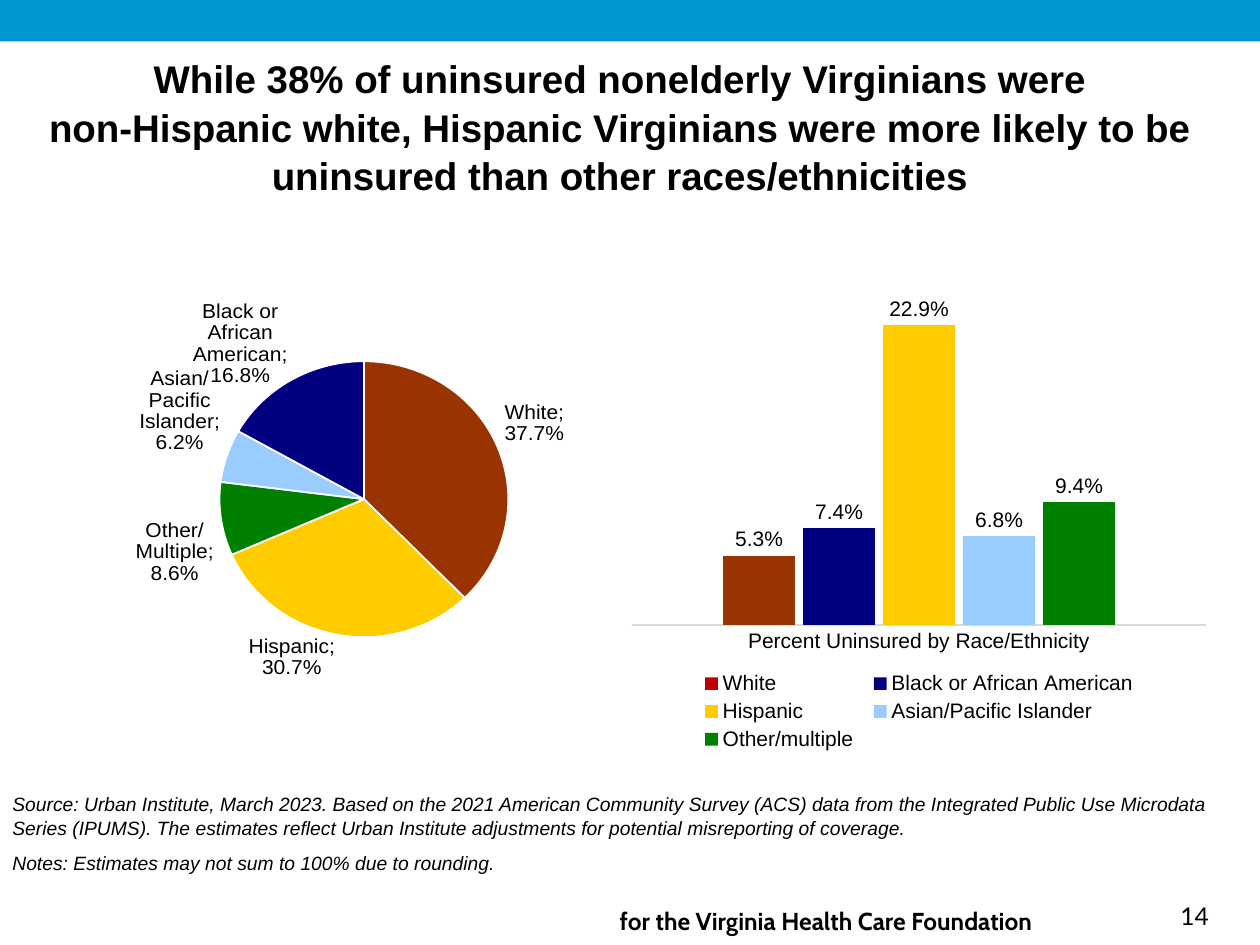
from lxml import etree
from pptx import Presentation
from pptx.chart.data import CategoryChartData
from pptx.dml.color import RGBColor
from pptx.enum.chart import XL_CHART_TYPE, XL_LABEL_POSITION, XL_LEGEND_POSITION, XL_TICK_MARK
from pptx.enum.shapes import MSO_SHAPE
from pptx.enum.text import MSO_ANCHOR, MSO_AUTO_SIZE, PP_ALIGN
from pptx.oxml.ns import qn
from pptx.util import Inches, Pt

PIE = XL_CHART_TYPE.PIE
COLUMNS = XL_CHART_TYPE.COLUMN_CLUSTERED
OUTSIDE = XL_LABEL_POSITION.OUTSIDE_END
BOTTOM = XL_LEGEND_POSITION.BOTTOM
NO_TICKS = XL_TICK_MARK.NONE
RECTANGLE = MSO_SHAPE.RECTANGLE
TOP = MSO_ANCHOR.TOP
NO_AUTOFIT = MSO_AUTO_SIZE.NONE
LEFT = PP_ALIGN.LEFT
CENTER = PP_ALIGN.CENTER

BLACK = "000000"
PERCENT = "0.0%"
UNINSURED_SHARES = [
    ("White", 0.377, "993300"),
    ("Hispanic", 0.307, "FFCC00"),
    ("Other/Multiple", 0.086, "008000"),
    ("Asian/Pacific Islander", 0.062, "99CCFF"),
    ("Black or African American", 0.168, "000080"),
]
UNINSURED_RATES = [
    ("White", 0.053, "C00000"),
    ("Black or African American", 0.074, "000080"),
    ("Hispanic", 0.229, "FFCC00"),
    ("Asian/Pacific Islander", 0.068, "99CCFF"),
    ("Other/multiple", 0.094, "008000"),
]
HEADLINE = [
    "While 38% of uninsured nonelderly Virginians were",
    "non-Hispanic white, Hispanic Virginians were more likely to be "
    "uninsured than other races/ethnicities",
]
SOURCE_NOTES = [
    "Source: Urban Institute, March 2023. Based on the 2021 American Community Survey (ACS) "
    "data from the Integrated Public Use Microdata Series (IPUMS). The estimates reflect "
    "Urban Institute adjustments for potential misreporting of coverage.",
    "Notes: Estimates may not sum to 100% due to rounding.",
]


def rgb(color):
    """Turn a hex string into a colour."""
    return RGBColor.from_string(color)


def paint(fill, color):
    """Apply a solid fill."""
    fill.solid()
    fill.fore_color.rgb = rgb(color)


def set_font(font, size, name="Arial", bold=False, italic=False):
    """Style a font in black."""
    font.size = Pt(size)
    font.name = name
    font.bold = bold
    font.italic = italic
    font.color.rgb = rgb(BLACK)


def write(frame, lines, size, align=LEFT, spacing=1.0, gap=0, **style):
    """Write one paragraph for each line of text."""
    frame.word_wrap = True
    frame.auto_size = NO_AUTOFIT
    frame.vertical_anchor = TOP
    frame.text = "\n".join(lines)
    for index, paragraph in enumerate(frame.paragraphs):
        paragraph.alignment = align
        paragraph.line_spacing = spacing
        paragraph.space_before = Pt(gap if index else 0)
        set_font(paragraph.font, size, **style)


def add_text(slide, box, lines, size, **style):
    """Add a text box."""
    textbox = slide.shapes.add_textbox(*map(Inches, box))
    write(textbox.text_frame, lines, size, **style)


def add_headline(slide, box, lines):
    """Place and fill the title placeholder."""
    title = slide.shapes.title
    title.left, title.top, title.width, title.height = map(Inches, box)
    write(title.text_frame, lines, 22, align=CENTER, spacing=1.05, bold=True)


def add_band(slide, box, color):
    """Add a plain coloured band."""
    band = slide.shapes.add_shape(RECTANGLE, *map(Inches, box))
    band.shadow.inherit = False
    paint(band.fill, color)
    band.line.fill.background()


def set_layout(parent, index, inner, **fractions):
    """Fix the position of a chart part in fractions of the chart."""
    for old in parent.findall(qn("c:layout")):
        parent.remove(old)
    layout = etree.Element(qn("c:layout"))
    manual = etree.SubElement(layout, qn("c:manualLayout"))
    settings = {"layoutTarget": "inner"} if inner else {}
    settings |= {"xMode": "edge", "yMode": "edge", **fractions}
    for tag, value in settings.items():
        etree.SubElement(manual, qn(f"c:{tag}")).set("val", str(value))
    parent.insert(index, layout)


def add_chart(slide, kind, box, categories, series, **plot_area):
    """Add a chart with a fixed plot area."""
    data = CategoryChartData(number_format=PERCENT)
    data.categories = categories
    for name, values in series:
        data.add_series(name, values)
    chart = slide.shapes.add_chart(kind, *map(Inches, box), data).chart
    chart.has_title = False
    chart.has_legend = False
    set_font(chart.font, 12)
    set_layout(chart.plots[0]._element.getparent(), 0, True, **plot_area)
    return chart


def label_values(series):
    """Show percentages outside the data points."""
    labels = series.data_labels
    labels.show_value = True
    labels.number_format = PERCENT
    labels.number_format_is_linked = False
    labels.position = OUTSIDE
    set_font(labels.font, 12)
    return labels


def add_share_pie(slide, box):
    """Add the pie of uninsured people by race and ethnicity."""
    names, shares, colors = zip(*UNINSURED_SHARES)
    chart = add_chart(slide, PIE, box, names, [("Series 1", shares)],
                      x=0.29, y=0.16, w=0.51, h=0.73)
    chart.plots[0].vary_by_categories = True
    slices = chart.plots[0].series[0]
    for index, color in enumerate(colors):
        wedge = slices.points[index].format
        paint(wedge.fill, color)
        wedge.line.color.rgb = rgb("FFFFFF")
        wedge.line.width = Pt(1)
    labels = label_values(slices)
    labels.show_category_name = True
    separator = etree.Element(qn("c:separator"))
    separator.text = "; "
    labels._element.find(qn("c:showBubbleSize")).addnext(separator)


def add_rate_columns(slide, box):
    """Add the columns of uninsured rates by race and ethnicity."""
    series = [(name, [rate]) for name, rate, _ in UNINSURED_RATES]
    chart = add_chart(slide, COLUMNS, box, ["Percent Uninsured by Race/Ethnicity"], series,
                      x=0.02, y=0.02, w=0.96, h=0.7)
    plot = chart.plots[0]
    plot.vary_by_categories = False
    plot.gap_width = 250
    plot.overlap = -10
    for group, (_, _, color) in zip(plot.series, UNINSURED_RATES):
        paint(group.format.fill, color)
        label_values(group)
    paint(plot.series[0].points[0].format.fill, "993300")

    rates = chart.value_axis
    rates.visible = False
    rates.has_major_gridlines = False
    rates.minimum_scale, rates.maximum_scale = 0, 0.25
    baseline = chart.category_axis
    baseline.major_tick_mark = baseline.minor_tick_mark = NO_TICKS
    baseline.format.line.color.rgb = rgb("D9D9D9")
    baseline.format.line.width = Pt(0.75)
    set_font(baseline.tick_labels.font, 12)

    chart.has_legend = True
    chart.legend.position = BOTTOM
    chart.legend.include_in_layout = False
    set_font(chart.legend.font, 12)
    set_layout(chart.legend._element, 1, False, x=0.12, y=0.81, w=0.76, h=0.19)


def main():
    """Build the slide and save it."""
    deck = Presentation()
    deck.slide_width, deck.slide_height = Inches(10), Inches(7.5)
    slide = deck.slides.add_slide(deck.slide_layouts[5])
    add_band(slide, (0, 0, 10, 0.33), "0096D2")
    add_text(slide, (9.27, 7.1, 0.73, 0.34), ["14"], 14, name="Lato")
    add_share_pie(slide, (0.36, 2.29, 4.64, 3.14))
    add_headline(slide, (0.18, 0.37, 9.48, 1.21), HEADLINE)
    add_text(slide, (0, 6.22, 10, 0.75), SOURCE_NOTES, 11, spacing=1.08, gap=5.5, italic=True)
    add_text(slide, (4.82, 7.14, 4.85, 0.26), ["for the Virginia Health Care Foundation"], 14,
             name="Cabin", bold=True)
    add_rate_columns(slide, (4.92, 2.29, 4.75, 3.71))
    deck.save("out.pptx")


if __name__ == "__main__":
    main()
